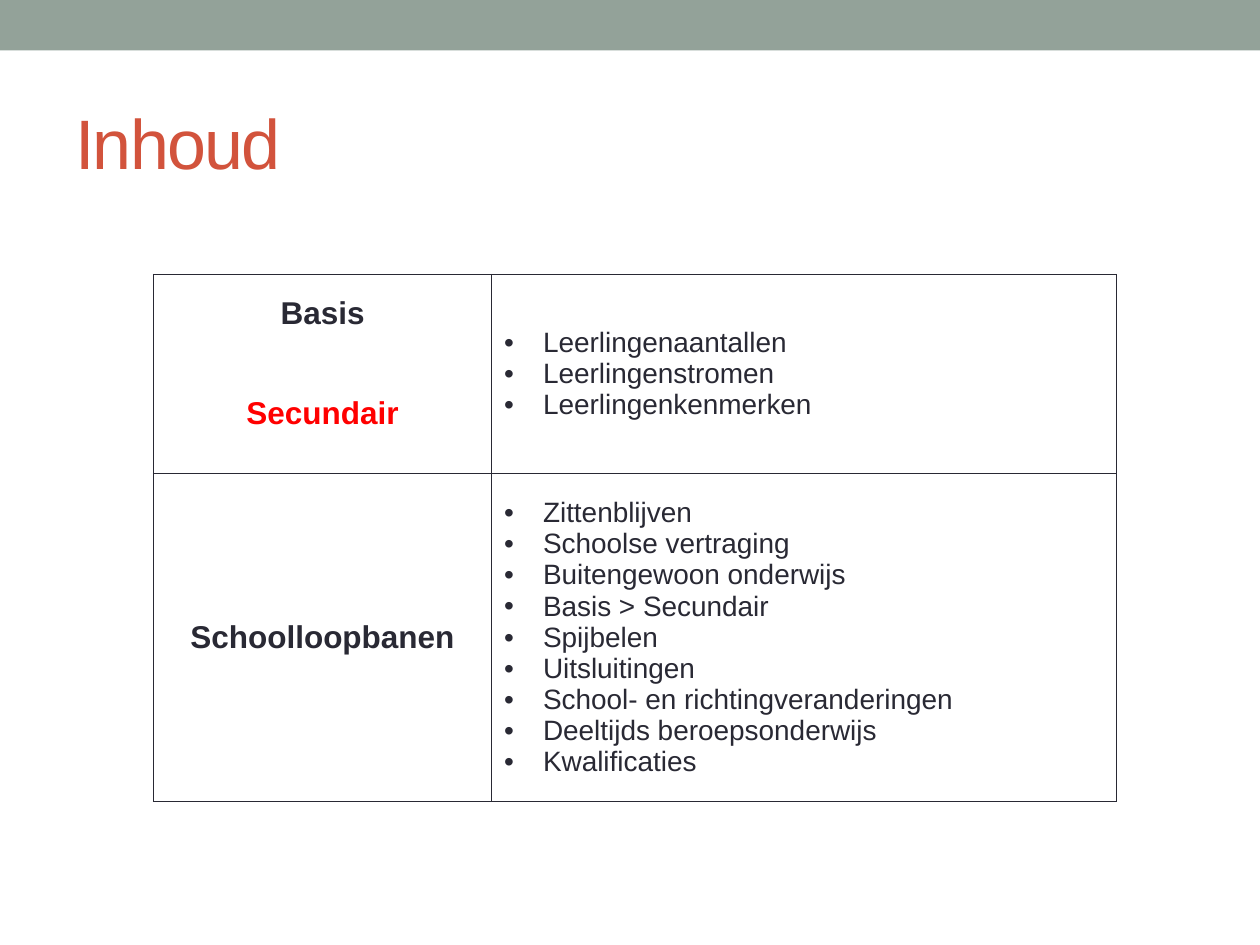
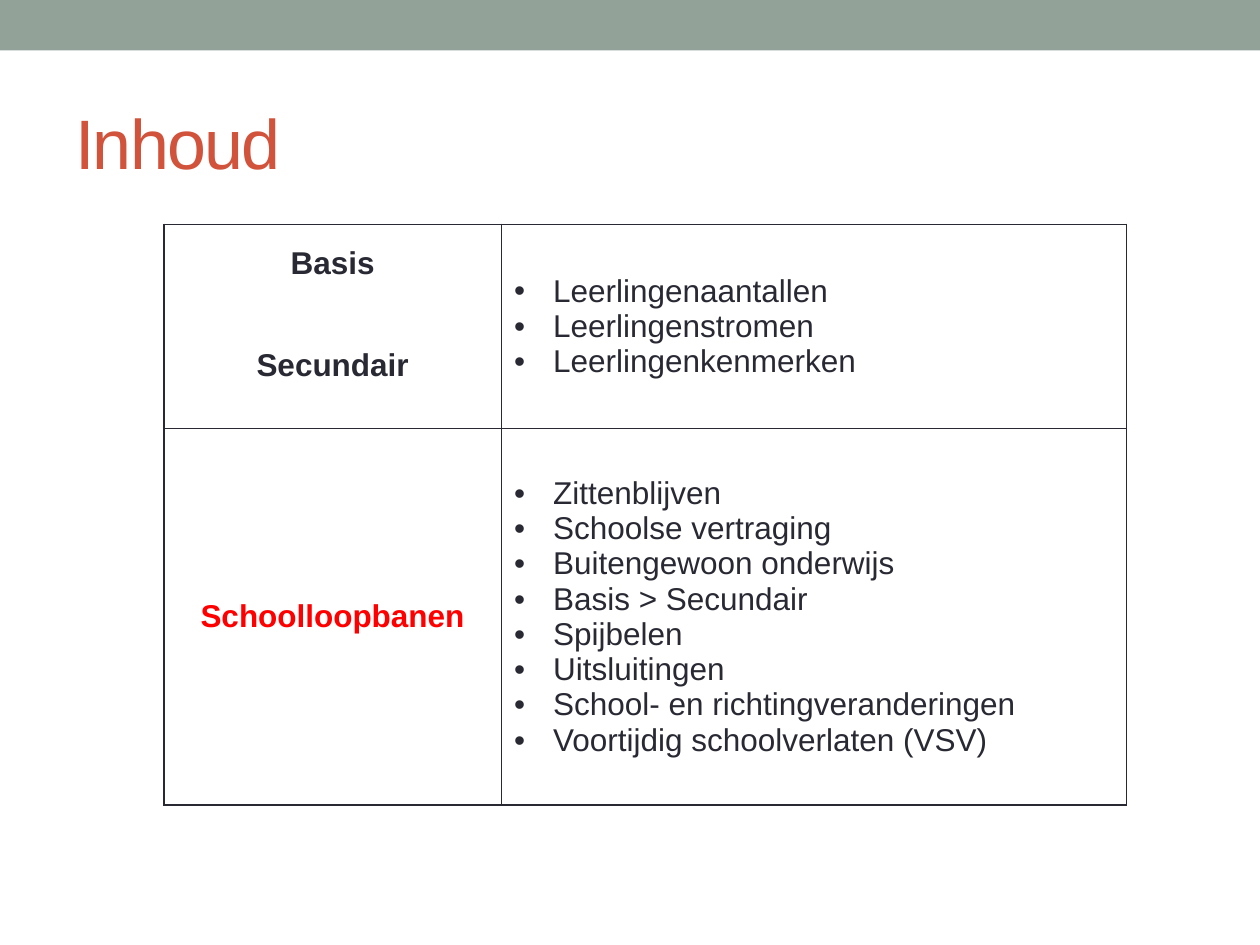
from pptx import Presentation
from pptx.dml.color import RGBColor
from pptx.enum.shapes import MSO_SHAPE
from pptx.enum.text import MSO_ANCHOR, PP_ALIGN
from pptx.oxml.ns import qn
from pptx.util import Inches, Pt
from lxml.etree import SubElement

BAND, TITLE, INK, ACCENT, PAPER = "93A299", "D2533C", "292934", "FF0000", "FFFFFF"
COLUMN_WIDTHS = [2.68, 4.96]
LEVEL_HEIGHTS = [0.62, 0.96]
PUPILS = ["Leerlingenaantallen", "Leerlingenstromen", "Leerlingenkenmerken"]
CAREERS = ["Zittenblijven", "Schoolse vertraging", "Buitengewoon onderwijs",
           "Basis > Secundair", "Spijbelen", "Uitsluitingen",
           "School- en richtingveranderingen"]

AGENDAS = [
    {"left": 1.22, "top": 2.18, "career_height": 2.6, "topic_size": 16,
     "current": "Secundair",
     "careers": CAREERS + ["Deeltijds beroepsonderwijs", "Kwalificaties"]},
    {"left": 1.3, "top": 1.78, "career_height": 2.99, "topic_size": 18,
     "current": "Schoolloopbanen",
     "careers": CAREERS + ["Voortijdig schoolverlaten (VSV)"]},
]


def rgb(value):
    return RGBColor.from_string(value)


class Deck:
    def __init__(self):
        self.presentation = Presentation()
        self.presentation.slide_width = Inches(10)
        self.presentation.slide_height = Inches(7.5)
        self.slide = None

    def new_slide(self, heading):
        self.slide = self.presentation.slides.add_slide(self.presentation.slide_layouts[6])
        self.band()
        self.title(heading)

    def band(self):
        band = self.slide.shapes.add_shape(
            MSO_SHAPE.RECTANGLE, 0, 0, Inches(10), Inches(0.4))
        band.shadow.inherit = False
        band.fill.solid()
        band.fill.fore_color.rgb = rgb(BAND)
        band.line.fill.background()

    def title(self, heading):
        frame = self.slide.shapes.add_textbox(
            Inches(0.5), Inches(0.58), Inches(9), Inches(1.08)).text_frame
        frame.word_wrap = True
        frame.vertical_anchor = MSO_ANCHOR.MIDDLE
        run = self.add_text(frame.paragraphs[0], heading, TITLE, size=Pt(40))
        run.font._element.set("spc", "-100")

    def add_text(self, paragraph, text, color=INK, **formats):
        run = paragraph.add_run()
        run.text = text
        for name, value in {"name": "Arial", "bold": False, **formats}.items():
            setattr(run.font, name, value)
        run.font.color.rgb = rgb(color)
        return run

    def cell(self, cell, open_sides=""):
        """Fill a cell and rule its sides, leaving out those in open_sides."""
        properties = cell._tc.get_or_add_tcPr()
        for side in "LRTB":
            line = SubElement(properties, qn(f"a:ln{side}"), w=str(Pt(1)))
            if side in open_sides:
                SubElement(line, qn("a:noFill"))
            else:
                SubElement(SubElement(line, qn("a:solidFill")), qn("a:srgbClr"), val=INK)
        cell.fill.solid()
        cell.fill.fore_color.rgb = rgb(PAPER)
        cell.vertical_anchor = MSO_ANCHOR.MIDDLE

    def label(self, cell, text, color):
        paragraph = cell.text_frame.paragraphs[0]
        paragraph.alignment = PP_ALIGN.CENTER
        self.add_text(paragraph, text, color, size=Pt(18), bold=True)

    def topics(self, cell, topics, size):
        frame = cell.text_frame
        for index, topic in enumerate(topics):
            paragraph = frame.add_paragraph() if index else frame.paragraphs[0]
            properties = paragraph._p.get_or_add_pPr()
            properties.set("marL", str(Inches(0.31)))
            properties.set("indent", str(-Inches(0.31)))
            SubElement(properties, qn("a:buFont"), typeface="Arial")
            SubElement(properties, qn("a:buChar"), char="•")
            self.add_text(paragraph, topic, size=Pt(size))

    def agenda(self, left, top, career_height, topic_size, current, careers):
        heights = LEVEL_HEIGHTS + [career_height]
        table = self.slide.shapes.add_table(
            len(heights), len(COLUMN_WIDTHS), Inches(left), Inches(top),
            Inches(sum(COLUMN_WIDTHS)), Inches(sum(heights))).table
        table.first_row = table.horz_banding = False
        for column, width in zip(table.columns, COLUMN_WIDTHS):
            column.width = Inches(width)
        for row, height in zip(table.rows, heights):
            row.height = Inches(height)

        table.cell(0, 1).merge(table.cell(1, 1))
        labels = ["Basis", "Secundair", "Schoolloopbanen"]
        for index, (text, open_side) in enumerate(zip(labels, ["B", "T", ""])):
            self.cell(table.cell(index, 0), open_side)
            self.cell(table.cell(index, 1))
            self.label(table.cell(index, 0), text, ACCENT if text == current else INK)
        self.topics(table.cell(0, 1), PUPILS, topic_size)
        self.topics(table.cell(2, 1), careers, topic_size)


def main():
    deck = Deck()
    for agenda in AGENDAS:
        deck.new_slide("Inhoud")
        deck.agenda(**agenda)
    deck.presentation.save("out.pptx")


if __name__ == "__main__":
    main()
